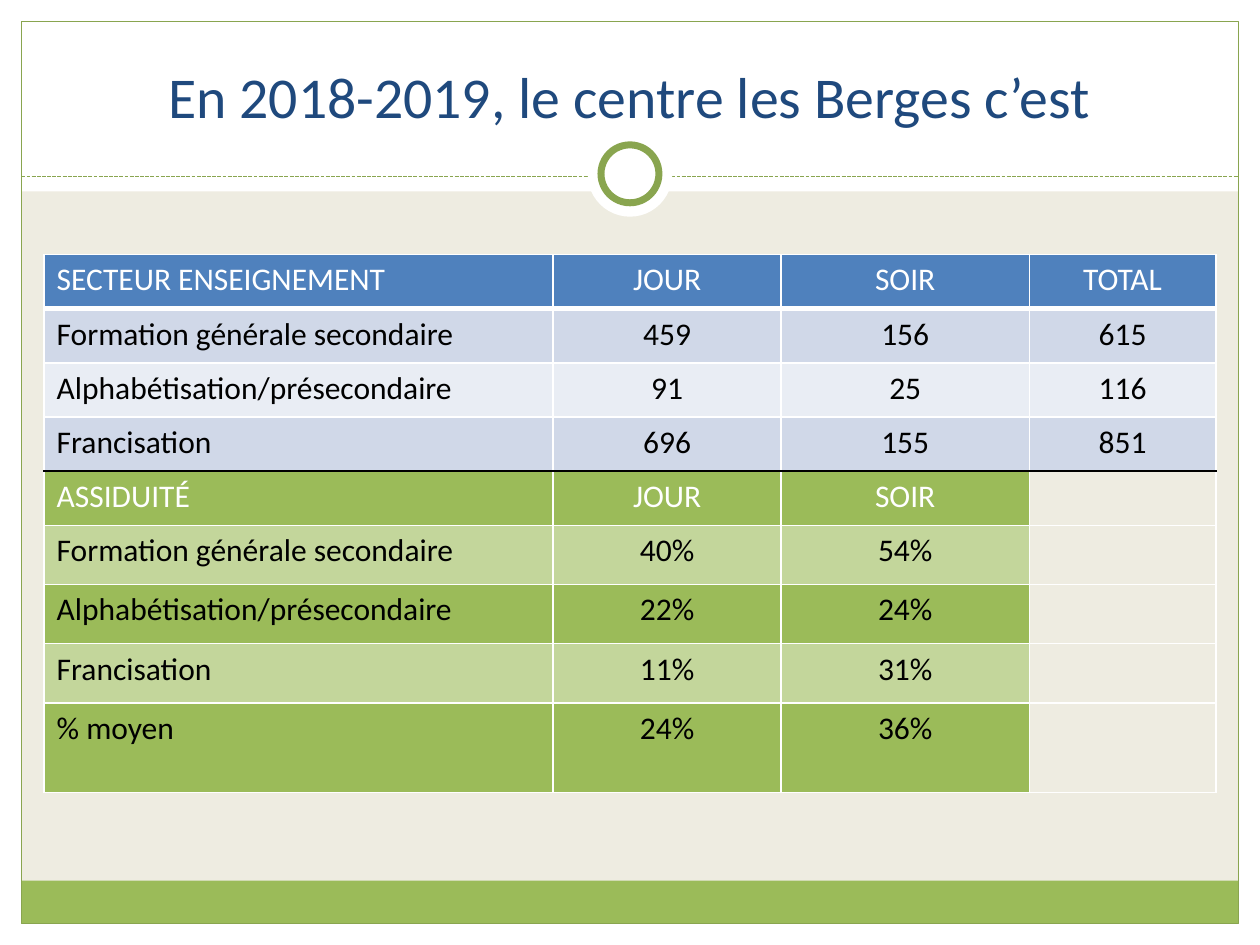
from lxml.etree import SubElement
from pptx import Presentation
from pptx.dml.color import RGBColor
from pptx.enum.dml import MSO_LINE
from pptx.enum.shapes import MSO_CONNECTOR, MSO_SHAPE
from pptx.enum.text import MSO_ANCHOR, PP_ALIGN
from pptx.oxml.ns import qn
from pptx.util import Inches, Pt

WHITE = RGBColor(0xFF, 0xFF, 0xFF)
BLACK = RGBColor(0, 0, 0)
SAND = RGBColor(0xEE, 0xEC, 0xE1)
NAVY = RGBColor(0x1F, 0x49, 0x7D)
BLUE = RGBColor(0x4F, 0x81, 0xBD)
PALE = RGBColor(0xD0, 0xD8, 0xE8)
MIST = RGBColor(0xE9, 0xED, 0xF4)
GREEN = RGBColor(0x9B, 0xBB, 0x59)
LIME = RGBColor(0xC3, 0xD6, 0x9B)
OLIVE = RGBColor(0x89, 0xA5, 0x4F)

# The slide is a grid of 100 columns by 75 rows of square units.
COLS, ROWS = 100, 75
UNIT = Inches(10) / COLS
EDGE = 1.7
MID = COLS / 2
RULE = 14

WIDTHS = [40.4, 18.1, 19.7, 14.8]
HEIGHTS = [4.3] * 5 + [4.7] * 3 + [7.1]
# Each row: fill, text colour, cell texts
DATA = [
    (BLUE, WHITE, ["SECTEUR ENSEIGNEMENT", "JOUR", "SOIR", "TOTAL"]),
    (PALE, BLACK, ["Formation générale secondaire", "459", "156", "615"]),
    (MIST, BLACK, ["Alphabétisation/présecondaire", "91", "25", "116"]),
    (PALE, BLACK, ["Francisation", "696", "155", "851"]),
    (GREEN, WHITE, ["ASSIDUITÉ", "JOUR", "SOIR", ""]),
    (LIME, BLACK, ["Formation générale secondaire", "40%", "54%", ""]),
    (GREEN, BLACK, ["Alphabétisation/présecondaire", "22%", "24%", ""]),
    (LIME, BLACK, ["Francisation", "11%", "31%", ""]),
    (GREEN, BLACK, ["% moyen", "24%", "36%", ""]),
]
HEAD, SPLIT = 0, 3  # rows with a special lower border


def grid(*units):
    return [round(u * UNIT) for u in units]


def style(item, form):
    for name, value in form.items():
        setattr(item, name, value)


def paint(item, color):
    item.fill.solid()
    item.fill.fore_color.rgb = color


def draw(slide, kind, box, fill=None, width=None):
    """Add a preset shape; a width gives it an olive outline."""
    shape = slide.shapes.add_shape(kind, *grid(*box))
    shape.shadow.inherit = False
    if fill is None:
        shape.fill.background()
    else:
        paint(shape, fill)
    if width is None:
        shape.line.fill.background()
    else:
        shape.line.color.rgb = OLIVE
        shape.line.width = Pt(width)


def disc(slide, size, y, width=None):
    draw(slide, MSO_SHAPE.OVAL, (MID - size / 2, y, size, size), WHITE, width)


def dash(slide):
    line = slide.shapes.add_connector(
        MSO_CONNECTOR.STRAIGHT, *grid(EDGE, RULE, COLS - EDGE, RULE))
    line.line.color.rgb = OLIVE
    style(line.line, {"width": Pt(0.75), "dash_style": MSO_LINE.SQUARE_DOT})
    SubElement(line.element.spPr, qn("a:effectLst"))


def frame(slide):
    rect = MSO_SHAPE.RECTANGLE
    wide, tall = COLS - 2 * EDGE, ROWS - 2 * EDGE
    for box in [(0, ROWS - EDGE, COLS, EDGE), (0, 0, COLS, 15.2),
                (0, 0, EDGE, ROWS), (COLS - EDGE, 0, EDGE, ROWS)]:
        draw(slide, rect, box, WHITE)
    draw(slide, rect, (EDGE, 69.9, wide, 3.4), GREEN)
    draw(slide, rect, (EDGE, EDGE, wide, tall), width=0.75)
    dash(slide)
    disc(slide, 6.7, 10.5)
    disc(slide, 4.6, 11.5, 4)


def write(text, words, size, color, align):
    para = text.paragraphs[0]
    para.alignment = align
    font = para.font
    if words:
        run = para.add_run()
        run.text = words
        font = run.font
    style(font, {"name": "Calibri", "size": Pt(size)})
    font.color.rgb = color


def head(slide, words):
    title = slide.shapes.title
    title.element.getparent().append(title.element)  # bring to front
    left, top, width, height = grid(3.3, 2.5, 93.3, 8.3)
    style(title, {"left": left, "top": top, "width": width, "height": height})
    style(title.text_frame, {"vertical_anchor": MSO_ANCHOR.BOTTOM,
                             "word_wrap": True})
    write(title.text_frame, words, 33, NAVY, PP_ALIGN.CENTER)


def border(cell, row):
    """Set the four borders, which come before the fill in the XML."""
    low = 3 if row == HEAD else 1
    high = 3 if row == HEAD + 1 else 1
    base = BLACK if row == SPLIT else WHITE
    roof = BLACK if row == SPLIT + 1 else WHITE
    props = cell._tc.get_or_add_tcPr()
    for tag, width, color in [("a:lnL", 1, WHITE), ("a:lnR", 1, WHITE),
                              ("a:lnT", high, roof), ("a:lnB", low, base)]:
        line = SubElement(props, qn(tag), w=str(Pt(width)))
        fill = SubElement(line, qn("a:solidFill"))
        SubElement(fill, qn("a:srgbClr"), val=str(color))


def table(slide):
    box = grid(3.5, 20.2, sum(WIDTHS), sum(HEIGHTS))
    made = slide.shapes.add_table(len(DATA), len(WIDTHS), *box).table
    for col, width in zip(made.columns, grid(*WIDTHS)):
        col.width = width
    for row, height in zip(made.rows, grid(*HEIGHTS)):
        row.height = height
    for r, (fill, color, texts) in enumerate(DATA):
        for c, words in enumerate(texts):
            cell = made.cell(r, c)
            border(cell, r)
            paint(cell, fill if words else SAND)
            align = PP_ALIGN.CENTER if c else PP_ALIGN.LEFT
            write(cell.text_frame, words, 18, color, align)


def main():
    deck = Presentation()
    style(deck, {"slide_width": round(COLS * UNIT),
                 "slide_height": round(ROWS * UNIT)})
    slide = deck.slides.add_slide(deck.slide_layouts[5])
    paint(slide.background, SAND)
    frame(slide)
    head(slide, "En 2018-2019, le centre les Berges c’est")
    table(slide)
    deck.save("out.pptx")


if __name__ == "__main__":
    main()
